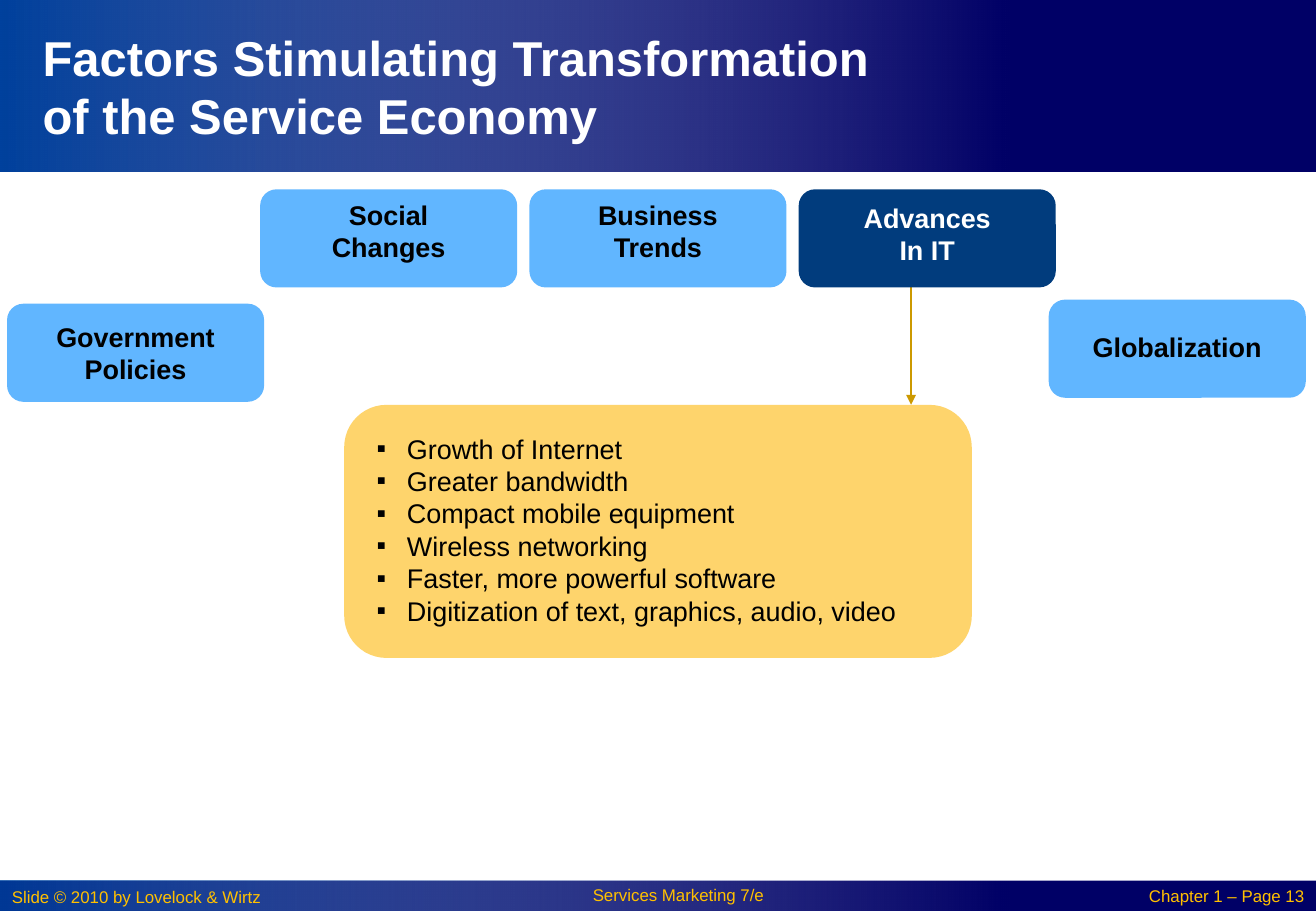
"""Build the slide on factors transforming the service economy."""
import lxml.etree
import pptx
import pptx.dml.color
import pptx.enum.shapes
import pptx.enum.text
import pptx.oxml
import pptx.oxml.ns
import pptx.util

COLUMNS, ROWS = 130, 90
UNIT = pptx.util.Inches(1) // 12
FONT = "Arial"
NAVY, GLOW, WHITE, BLACK = "000066", "0152AB", "FFFFFF", "000000"
SKY, DEEP_BLUE, SAND, OCHRE, GOLD = "61B6FF", "013C7D", "FED46C", "CC9900", "FFC000"
CARD_WIDTH, CARD_HEIGHT = 25.4, 9.7
TOP_LEFT, TOP_ROW, TOP_STEP = 25.7, 18.7, 26.6
PANEL = (34, 40, 62, 25)

Shape = pptx.enum.shapes.MSO_SHAPE
Align = pptx.enum.text.PP_ALIGN
Anchor = pptx.enum.text.MSO_ANCHOR


def grid(*cells):
    """Turn grid columns and rows into lengths."""
    return [pptx.util.Emu(round(cell * UNIT)) for cell in cells]


def paint(color_format, color):
    """Give a colour format a hex colour."""
    color_format.rgb = pptx.dml.color.RGBColor.from_string(color)


def style(paragraph, size, color, bold=False, align=Align.LEFT):
    """Format all the text of a paragraph."""
    font = paragraph.font
    font.name, font.size, font.bold = FONT, pptx.util.Pt(size), bold
    paint(font.color, color)
    paragraph.alignment = align


def add_block(slide, place, color, kind=Shape.RECTANGLE):
    """Add a flat, borderless shape."""
    block = slide.shapes.add_shape(kind, *grid(*place))
    block.shadow.inherit = False
    block.fill.solid()
    paint(block.fill.fore_color, color)
    block.line.fill.background()
    return block


def add_band(slide, top, height, opacity):
    """Add a navy band with a blue glow that fades out to the right."""
    add_block(slide, (0, top, COLUMNS, height), NAVY)
    glow = add_block(slide, (0, top, 100, height), GLOW)
    glow.fill.gradient()
    glow.fill.gradient_angle = 0
    for stop, color in zip(glow.fill.gradient_stops, (GLOW, WHITE)):
        paint(stop.color, color)
    colors = glow._element.spPr.iter(pptx.oxml.ns.qn("a:srgbClr"))
    for color, alpha in zip(colors, (opacity, 0)):
        lxml.etree.SubElement(color, pptx.oxml.ns.qn("a:alpha"), val=str(alpha * 1000))


def add_footer(slide, place, text, align, spacing=1.0):
    """Add one footer note."""
    frame = slide.shapes.add_textbox(*grid(*place)).text_frame
    frame.word_wrap = True
    note = frame.paragraphs[0]
    note.text = text
    note.line_spacing = spacing
    style(note, 10, GOLD, align=align)


def add_card(slide, left, top, lines, color=SKY, ink=BLACK, lift=0):
    """Add a rounded factor card whose label sits slightly above the middle."""
    place = (left, top, CARD_WIDTH, CARD_HEIGHT)
    frame = add_block(slide, place, color, Shape.ROUNDED_RECTANGLE).text_frame
    frame.word_wrap = True
    frame.vertical_anchor = Anchor.MIDDLE
    frame.margin_top, frame.margin_bottom = grid(0, lift)
    frame.text = "\n".join(lines)
    for label in frame.paragraphs:
        style(label, 16, ink, True, Align.CENTER)


def add_arrow(slide, start, end):
    """Add a straight arrow."""
    arrow = slide.shapes.add_connector(
        pptx.enum.shapes.MSO_CONNECTOR.STRAIGHT, *grid(*start, *end))
    paint(arrow.line.color, OCHRE)
    arrow.line.width = pptx.util.Pt(1.25)
    qn = pptx.oxml.ns.qn
    lxml.etree.SubElement(arrow.line._get_or_add_ln(), qn("a:tailEnd"), type="triangle")
    lxml.etree.SubElement(arrow._element.spPr, qn("a:effectLst"))


def place_on_top(slide, placeholder, place, anchor):
    """Move a placeholder to its place, in front of the shapes drawn so far."""
    slide.shapes._spTree.append(placeholder._element)
    placeholder.left, placeholder.top, placeholder.width, placeholder.height = grid(*place)
    frame = placeholder.text_frame
    frame.word_wrap = True
    frame.auto_size = pptx.enum.text.MSO_AUTO_SIZE.NONE
    frame.vertical_anchor = anchor
    return frame


def fill_title(slide, text):
    """Write the slide title."""
    frame = place_on_top(slide, slide.shapes.title, (3, 3, 85, 11), Anchor.MIDDLE)
    frame.text = text
    style(frame.paragraphs[0], 29, WHITE, True)


def fill_list(slide, items):
    """Write the bulleted list on the sand panel."""
    frame = place_on_top(slide, slide.placeholders[1], (36, 42.1, 60, 20.7), Anchor.TOP)
    frame.text = "\n".join(items)
    indent = pptx.util.Inches(0.25)
    for item in frame.paragraphs:
        properties = item._p.get_or_add_pPr()
        properties.set("marL", str(indent))
        properties.set("indent", str(-indent))
        lxml.etree.SubElement(properties, pptx.oxml.ns.qn("a:buChar"), char="▪")
        item.space_before = pptx.util.Pt(0)
        style(item, 16, BLACK)


def main():
    """Build and save the slide."""
    deck = pptx.Presentation()
    deck.slide_width, deck.slide_height = grid(COLUMNS, ROWS)
    slide = deck.slides.add_slide(deck.slide_layouts[1])

    add_band(slide, 87, 3, 69)
    add_band(slide, 0, 17, 80)
    add_footer(slide, (0, 87, 31, 3.3), "Slide © 2010 by Lovelock & Wirtz", Align.LEFT)
    add_footer(slide, (51, 87, 32, 3), "Services Marketing 7/e", Align.CENTER, 0.9)
    add_footer(slide, (109, 87.1, 21, 3), "Chapter 1 – Page 13", Align.RIGHT, 0.9)
    fill_title(slide, "Factors Stimulating Transformation of the Service Economy")

    add_arrow(slide, (90, 28), (90, PANEL[1]))
    top_cards = [
        (("Social", "Changes"), SKY, BLACK, 1.5),
        (("Business", "Trends"), SKY, BLACK, 1.5),
        (("Advances", "In IT"), DEEP_BLUE, WHITE, 0.9),
    ]
    for column, card in enumerate(top_cards):
        add_card(slide, TOP_LEFT + column * TOP_STEP, TOP_ROW, *card)
    add_card(slide, 0.7, 30, ("Government", "Policies"))
    add_card(slide, 103.6, 29.6, ("Globalization",), lift=0.4)

    add_block(slide, PANEL, SAND, Shape.ROUNDED_RECTANGLE)
    fill_list(slide, [
        "Growth of Internet",
        "Greater bandwidth",
        "Compact mobile equipment",
        "Wireless networking",
        "Faster, more powerful software",
        "Digitization of text, graphics, audio, video",
    ])
    deck.save("out.pptx")


if __name__ == "__main__":
    main()
